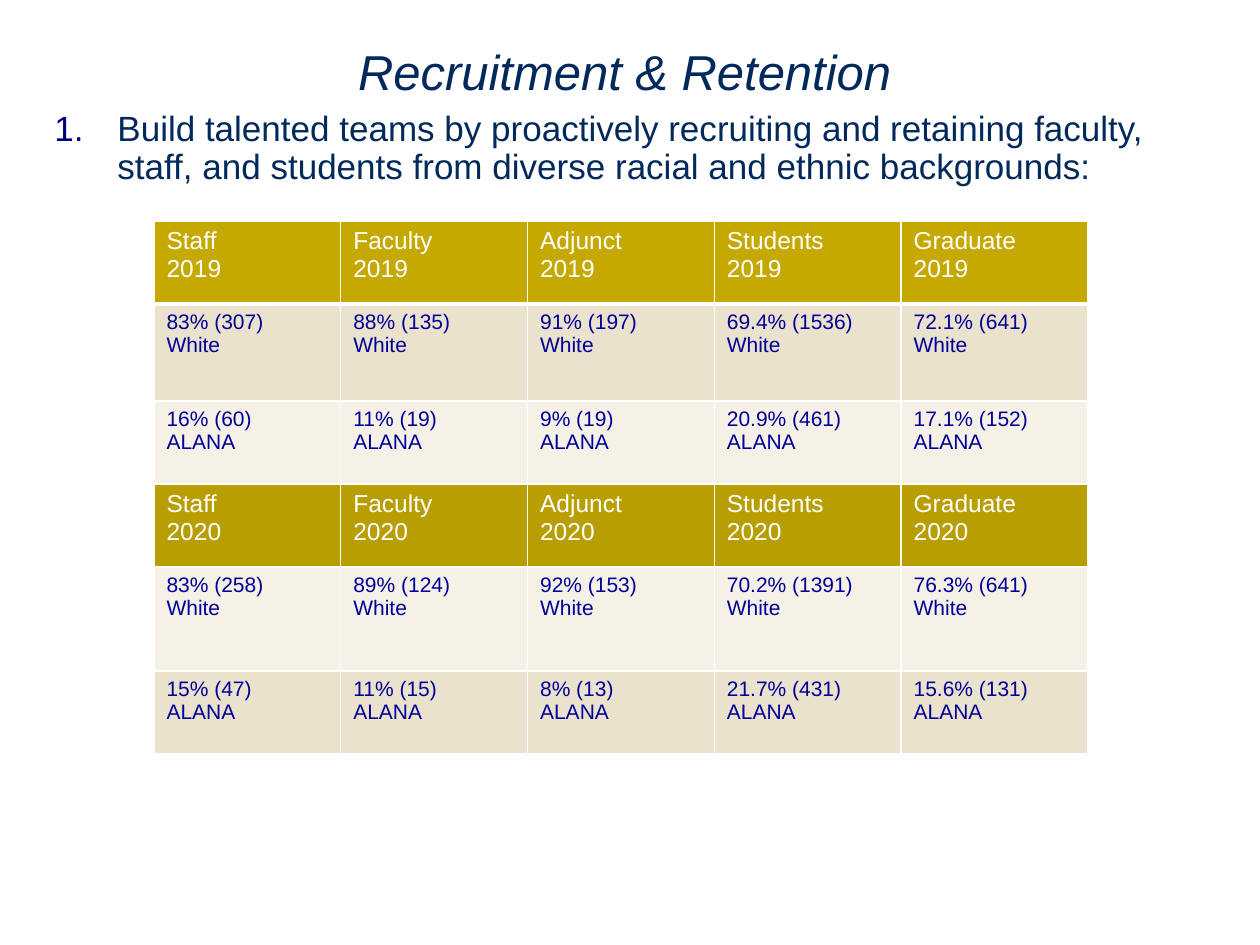
from collections import namedtuple

from lxml.etree import SubElement
from pptx import Presentation
from pptx.dml.color import RGBColor
from pptx.enum.text import PP_ALIGN as Align
from pptx.oxml.ns import qn
from pptx.util import Pt

Box = namedtuple("Box", "left top width height")

PX = 914400 / 126
FONT = "Arial"
NAVY = RGBColor(0x02, 0x29, 0x5C)
NUMBER_BLUE = RGBColor(0x00, 0x00, 0x82)
BODY_BLUE = RGBColor(0x00, 0x00, 0x99)
WHITE = RGBColor(0xFF, 0xFF, 0xFF)
GOLD = RGBColor(0xC5, 0xA9, 0x00)
DARK_GOLD = RGBColor(0xB8, 0x9E, 0x00)
SAND = RGBColor(0xEA, 0xE2, 0xCC)
CREAM = RGBColor(0xF5, 0xF1, 0xE7)

TITLE = "Recruitment & Retention"
GOAL = ("Build talented teams by proactively recruiting and retaining faculty, "
        "staff, and students from diverse racial and ethnic backgrounds:")

GROUPS = ["Staff", "Faculty", "Adjunct", "Students", "Graduate"]
Row = namedtuple("Row", "height fill size color lines")


def heading_row(year, fill):
    return Row(83, fill, 14, WHITE, [(group, year) for group in GROUPS])


def share_row(height, fill, label, shares):
    return Row(height, fill, 12, BODY_BLUE, [(share, label) for share in shares])


ROWS = [
    heading_row("2019", GOLD),
    share_row(97, SAND, "White",
              ["83% (307)", "88% (135)", "91% (197)", "69.4% (1536)", "72.1% (641)"]),
    share_row(83, CREAM, "ALANA",
              ["16% (60)", "11% (19)", "9% (19)", "20.9% (461)", "17.1% (152)"]),
    heading_row("2020", DARK_GOLD),
    share_row(104, CREAM, "White",
              ["83% (258)", "89% (124)", "92% (153)", "70.2% (1391)", "76.3% (641)"]),
    share_row(83, SAND, "ALANA",
              ["15% (47)", "11% (15)", "8% (13)", "21.7% (431)", "15.6% (131)"]),
]


def px(length):
    return round(length * PX)


def set_font(para, size, color, italic=False):
    font = para.font
    font.name, font.size, font.italic = FONT, Pt(size), italic
    font.color.rgb = color


def add_number(para, indent):
    props = para._p.get_or_add_pPr()
    props.set("marL", str(px(indent)))
    props.set("indent", str(-px(indent)))
    color = SubElement(props, qn("a:buClr"))
    SubElement(color, qn("a:srgbClr"), val=str(NUMBER_BLUE))
    SubElement(props, qn("a:buFont"), typeface=FONT)
    SubElement(props, qn("a:buAutoNum"), type="arabicPeriod")


def add_intro(page, box):
    frame = page.shapes.add_textbox(*map(px, box)).text_frame
    frame.word_wrap = True
    title = frame.paragraphs[0]
    title.text = TITLE
    title.alignment = Align.CENTER
    title.line_spacing = 0.9
    set_font(title, 28, NAVY, italic=True)

    goal = frame.add_paragraph()
    goal.text = GOAL
    goal.line_spacing = 0.9
    goal.space_before = Pt(6)
    add_number(goal, 63)
    set_font(goal, 20, NAVY)


def add_borders(cell, top, bottom):
    props = cell._tc.get_or_add_tcPr()
    for side, width in (("L", 1), ("R", 1), ("T", top), ("B", bottom)):
        line = SubElement(props, qn(f"a:ln{side}"), w=str(Pt(width)))
        fill = SubElement(line, qn("a:solidFill"))
        SubElement(fill, qn("a:srgbClr"), val=str(WHITE))


def add_share_table(page, box):
    table = page.shapes.add_table(len(ROWS), len(GROUPS), *map(px, box)).table
    for column in table.columns:
        column.width = px(box.width / len(GROUPS))
    for index, row in enumerate(ROWS):
        table.rows[index].height = px(row.height)
        for cell, lines in zip(table.rows[index].cells, row.lines):
            cell.text = "\n".join(lines)
            add_borders(cell, top=3 if index == 1 else 1, bottom=3 if index == 0 else 1)
            cell.fill.solid()
            cell.fill.fore_color.rgb = row.fill
            for para in cell.text_frame.paragraphs:
                set_font(para, row.size, row.color)


def main():
    deck = Presentation()
    deck.slide_width, deck.slide_height = px(1260), px(945)
    page = deck.slides.add_slide(deck.slide_layouts[6])
    add_intro(page, Box(42, 42, 1165, 840))
    add_share_table(page, Box(154, 221, 934, sum(row.height for row in ROWS)))
    deck.save("out.pptx")


if __name__ == "__main__":
    main()
